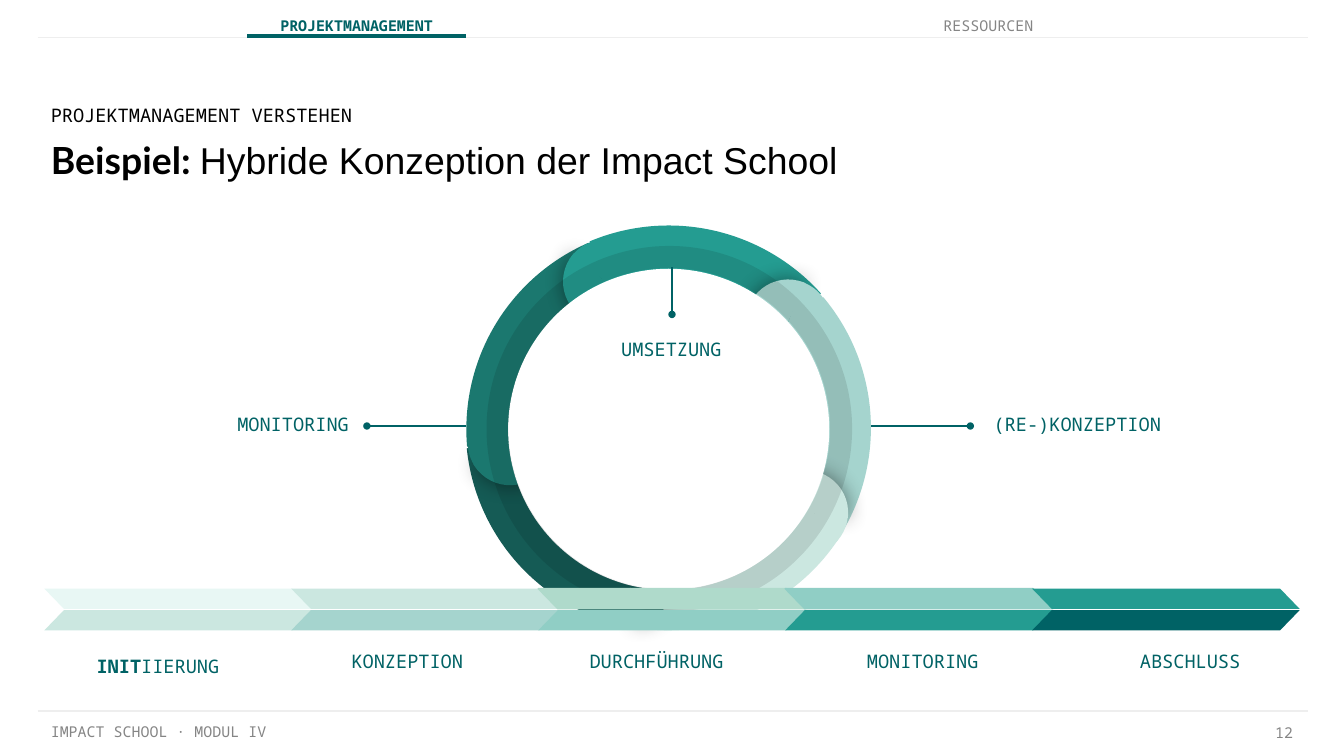
import pptx
import pptx.util
import pptx.dml.color
import pptx.enum.dml
import pptx.enum.shapes
import pptx.enum.text
import pptx.oxml
import pptx.oxml.ns

Inches = pptx.util.Inches
SHAPE = pptx.enum.shapes.MSO_SHAPE
ALIGN = pptx.enum.text.PP_ALIGN
ANCHOR = pptx.enum.text.MSO_ANCHOR

COLORS = {
    "white": "FFFFFF", "black": "000000", "gray": "858585", "rule": "EEEEEE",
    "petrol": "006265", "deep": "155B55", "dark": "1B786F", "teal": "249C91",
    "aqua": "90CEC5", "sage": "AFDACB", "mist": "A5D4CE", "mint": "CBE7E0",
    "ice": "E8F7F4",
}
MONO = "Noto Sans Mono"
DRAWING = pptx.oxml.ns.nsdecls("a")

# Ring parts from back to front: arcs (left, top, width, height, rotation, colour)
# and round caps (left, top, rotation, colour)
RING = [
    ("arc", 3.45, 1.67, 3.03, 3.03, 110, "mist"),
    ("arc", 3.47, 1.68, 3.03, 3.03, 325.1, "dark"),
    ("arc", 3.47, 1.66, 3.03, 3.04, 253, "deep"),
    ("cap", 3.48, 2.98, 260.1, "dark"),
    ("arc", 3.46, 1.68, 3.04, 3.03, 37, "teal"),
    ("cap", 5.55, 2.08, 44, "mist"),
    ("arc", 3.45, 1.66, 3.04, 3.03, 183, "mint"),
    ("cap", 4.37, 4.03, 190.1, "deep"),
    ("cap", 4.19, 1.78, 332.1, "teal"),
    ("cap", 5.68, 3.5, 117.1, "mint"),
]
# Upper colour, lower colour and whether the upper half is outlined
STAGES = [
    ("ice", "mint", False), ("mint", "mist", False), ("sage", "aqua", True),
    ("aqua", "teal", True), ("teal", "petrol", False),
]
FIRST_STAGE, LAST_STAGE = 0.33, 7.68
# Label text, left, top, width
LABELS = [
    ("KONZEPTION", 2.49, 4.75, 1.08), ("DURCHFÜHRUNG", 4.21, 4.75, 1.35),
    ("MONITORING", 6.19, 4.75, 1.35), ("ABSCHLUSS", 8.18, 4.75, 1.35),
    ("MONITORING", 1.64, 2.99, 1.08), ("(RE-)KONZEPTION", 7.22, 2.99, 1.59),
    ("UMSETZUNG", 4.32, 2.43, 1.35),
]


def color(name):
    return pptx.dml.color.RGBColor.from_string(COLORS[name])


def add_text(page, left, top, width, height, spans, size, ink, align=ALIGN.LEFT,
             anchor=ANCHOR.TOP, side=0.1, spacing=None, grow=False):
    """Add one paragraph; spans are (text, font name, bold)."""
    box = page.shapes.add_textbox(Inches(left), Inches(top), Inches(width), Inches(height))
    frame = box.text_frame
    frame.word_wrap = True
    frame.vertical_anchor = anchor
    frame.margin_left = frame.margin_right = Inches(side)
    frame.margin_top = frame.margin_bottom = Inches(0.1)
    if grow:
        frame.auto_size = pptx.enum.text.MSO_AUTO_SIZE.SHAPE_TO_FIT_TEXT
    para = frame.paragraphs[0]
    para.alignment = align
    if spacing:
        para.line_spacing = spacing
    for text, font, bold in spans:
        span = para.add_run()
        span.text = text
        span.font.name = font
        span.font.size = pptx.util.Pt(size)
        span.font.bold = bold
        span.font.color.rgb = color(ink)


def add_label(page, spans, left, top, width, spacing=None):
    add_text(page, left, top, width, 0.37, spans, 10, "petrol",
             ALIGN.CENTER, spacing=spacing, grow=True)


def add_line(page, start, end, ink="petrol", weight=0.75, dot=None):
    """Add a straight line; dot is headEnd, tailEnd or None."""
    line = page.shapes.add_connector(
        pptx.enum.shapes.MSO_CONNECTOR.STRAIGHT, *map(Inches, start + end))
    line.line.color.rgb = color(ink)
    line.line.width = pptx.util.Pt(weight)
    if dot:
        line.line._get_or_add_ln().append(pptx.oxml.parse_xml(
            f'<a:{dot} {DRAWING} type="oval" w="sm" len="sm"/>'))
    line.element.spPr.append(pptx.oxml.parse_xml(f"<a:effectLst {DRAWING}/>"))


def add_part(group, kind, left, top, width, height, fill, rotation=0,
             adjust=(), flip=False, outline=False):
    part = group.shapes.add_shape(
        kind, Inches(left), Inches(top), Inches(width), Inches(height))
    part.shadow.inherit = False
    part.rotation = rotation
    for index, value in enumerate(adjust):
        part.adjustments[index] = value
    part.fill.solid()
    part.fill.fore_color.rgb = color(fill)
    if outline:
        part.line.color.rgb = color(fill)
        part.line.width = pptx.util.Pt(0.75)
    else:
        part.line.fill.background()
    if flip:
        part.element.spPr.xfrm.set("flipH", "1")
    return part


def add_glow(part):
    effects = part.element.spPr.find(pptx.oxml.ns.qn("a:effectLst"))
    effects.append(pptx.oxml.parse_xml(
        f'<a:outerShdw {DRAWING} blurRad="{pptx.util.Pt(11.2)}" dist="0" dir="0" '
        'algn="ctr" rotWithShape="0"><a:srgbClr val="000000"><a:alpha val="43000"/>'
        '</a:srgbClr></a:outerShdw>'))


def add_cap(group, left, top, rotation, fill):
    """Round segment end: a shadowed half behind, a plain half in front."""
    place = (left, top, 0.63, 0.63, fill)
    add_glow(add_part(group, SHAPE.PIE, *place, rotation, (61.9, 149.96)))
    add_part(group, SHAPE.PIE, *place, (rotation + 179.4) % 360, (40.28, 171.84))


def add_ring(page):
    group = page.shapes.add_group_shape()
    for kind, *values in RING:
        if kind == "cap":
            add_cap(group, *values)
        else:
            *place, rotation, fill = values
            add_part(group, SHAPE.BLOCK_ARC, *place, fill, rotation,
                     (126.03, 168.68, 0.21))
    add_part(group, SHAPE.OVAL, 3.78, 2, 2.39, 2.39, "white", 193, flip=True)
    # Translucent inner shade
    shade = add_part(group, SHAPE.BLOCK_ARC, 3.62, 1.83, 2.72, 2.72, "black", 177.4,
                     (161.82, 161.8, 0.06), flip=True)
    tint = shade.element.spPr.find(".//" + pptx.oxml.ns.qn("a:srgbClr"))
    tint.append(pptx.oxml.parse_xml(f'<a:alpha {DRAWING} val="10000"/>'))


def add_timeline(page):
    group = page.shapes.add_group_shape()
    step = (LAST_STAGE - FIRST_STAGE) / (len(STAGES) - 1)
    for index, (upper, lower, outline) in enumerate(STAGES):
        left = FIRST_STAGE + step * index
        add_part(group, SHAPE.PARALLELOGRAM, left, 4.38, 1.99, 0.15, upper,
                 adjust=(0.97,), flip=True, outline=outline)
        add_part(group, SHAPE.PARALLELOGRAM, left, 4.54, 1.99, 0.15, lower,
                 adjust=(0.97,))


def add_frame(page):
    # Footer
    add_text(page, 0.28, 5.31, 6.3, 0.34, [("IMPACT SCHOOL · MODUL IV", MONO, False)],
             8, "gray")
    add_text(page, 9.29, 5.29, 0.43, 0.34, [("12", MONO, False)], 8, "gray",
             ALIGN.RIGHT, ANCHOR.MIDDLE, spacing=0.8)
    # Rules and active tab
    for top in (5.29, 0.28):
        add_line(page, (0.28, top), (9.73, top), "rule")
    add_line(page, (1.84, 0.27), (3.47, 0.27), weight=2.25)
    add_text(page, 1.78, 0.02, 1.75, 0.34, [("PROJEKTMANAGEMENT", MONO, True)],
             8, "petrol", ALIGN.CENTER, ANCHOR.MIDDLE, side=0)
    add_text(page, 6.48, 0.02, 1.75, 0.34, [("RESSOURCEN", MONO, False)],
             8, "gray", ALIGN.CENTER, ANCHOR.MIDDLE)


def main():
    # Widescreen page, 16 to 9
    deck = pptx.Presentation()
    deck.slide_width = Inches(10)
    deck.slide_height = Inches(10 * 9 / 16)
    page = deck.slides.add_slide(deck.slide_layouts[6])
    add_frame(page)

    # Title and subtitle
    add_text(page, 0.28, 0.92, 7.77, 0.52,
             [("Beispiel: ", "Lato", True),
              ("Hybride Konzeption der Impact School", "Arial", False)], 20, "black")
    add_text(page, 0.28, 0.76, 7.77, 0.2, [("PROJEKTMANAGEMENT VERSTEHEN", MONO, False)],
             10, "black", anchor=ANCHOR.MIDDLE)

    # Cycle above the project timeline
    add_ring(page)
    add_timeline(page)

    # Labels and their leader lines
    add_label(page, [("INIT", MONO, True), ("IIERUNG", MONO, False)], 0.5, 4.75, 1.35, 1.15)
    for text, left, top, width in LABELS:
        add_label(page, [(text, MONO, False)], left, top, width)
    add_line(page, (7.22, 3.17), (6.48, 3.17), dot="headEnd")
    add_line(page, (5, 2.34), (5, 1.99), dot="headEnd")
    add_line(page, (3.47, 3.17), (2.73, 3.17), dot="tailEnd")

    deck.save("out.pptx")


if __name__ == "__main__":
    main()
